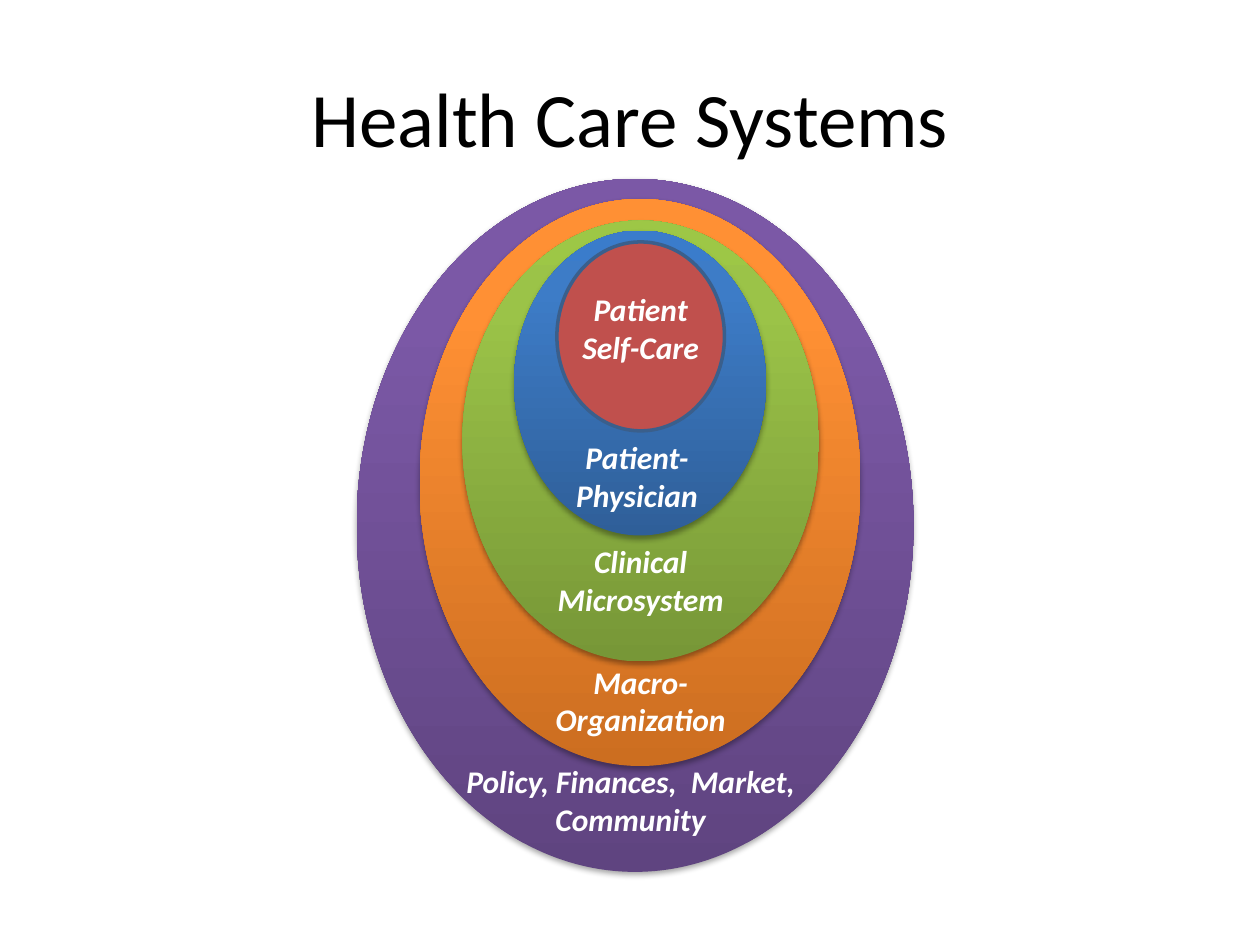
from copy import deepcopy
from dataclasses import dataclass

from lxml import etree
from pptx import Presentation
from pptx.dml.color import RGBColor
from pptx.enum.shapes import MSO_SHAPE
from pptx.enum.text import MSO_ANCHOR, MSO_AUTO_SIZE, PP_ALIGN
from pptx.oxml import parse_xml
from pptx.oxml.ns import nsdecls, qn
from pptx.util import Inches, Pt

OVAL = MSO_SHAPE.OVAL
MIDDLE, TOP = MSO_ANCHOR.MIDDLE, MSO_ANCHOR.TOP
GROW, FIXED = MSO_AUTO_SIZE.SHAPE_TO_FIT_TEXT, MSO_AUTO_SIZE.NONE
CENTER = PP_ALIGN.CENTER


@dataclass(frozen=True)
class Theme:
    font: str = "Calibri"
    title_size: int = 44
    label_size: int = 18
    title_color: str = "000000"
    label_color: str = "FFFFFF"
    policy: tuple = ("5F4480", "7B58A6", "7C57A8")
    macro: tuple = ("CC6E20", "FF9034", "FF9136")
    clinical: tuple = ("779737", "9BC348", "9DC746")
    physician: tuple = ("2F5F99", "3D7CC7", "3A7CCB")
    stops: tuple = (0, 0.8, 1)
    patient: str = "C0504D"
    patient_line: str = "3A5F8C"
    line_width: int = 2
    shadow_color: str = "000000"
    shadow_blur: float = 3.1
    shadow_distance: float = 1.8


THEME = Theme()
TITLE_FORMAT = {"name": THEME.font, "size": Pt(THEME.title_size)}
LABEL_FORMAT = {"name": THEME.font, "size": Pt(THEME.label_size), "bold": True, "italic": True}

TITLE_BOX = (0.5, 0.3, 9, 1.25)
SYSTEMS_BOX = (2.83, 1.42, 4.42, 5.5)

RINGS = [
    ((0, 0, 4.42, 5.5), THEME.policy),
    ((0.5, 0.16, 3.5, 4.5), THEME.macro),
    ((0.84, 0.33, 2.83, 3.5), THEME.clinical),
    ((1.25, 0.41, 2, 2.42), THEME.physician),
]
CORE = (1.59, 0.5, 1.33, 1.5)
LABELS = [
    ((1.42, 2.01, 1.61, 0.71), "Patient-Physician"),
    ((1.42, 2.83, 1.67, 0.71), "Clinical Microsystem"),
    ((1.42, 3.79, 1.67, 0.71), "Macro- Organization"),
    ((0.59, 4.58, 3.17, 0.71), "Policy, Finances,  Market, Community"),
    ((1.59, 0.83, 1.33, 0.71), "Patient Self-Care"),
]


def color(value):
    return RGBColor.from_string(value)


def within(box, part):
    left, top = box[:2]
    return left + part[0], top + part[1], part[2], part[3]


def add_text(slide, box, wording, formats, text_color, anchor, auto_size):
    frame = slide.shapes.add_textbox(*map(Inches, box)).text_frame
    for name, value in {"word_wrap": True, "vertical_anchor": anchor, "auto_size": auto_size}.items():
        setattr(frame, name, value)
    paragraph = frame.paragraphs[0]
    paragraph.alignment = CENTER
    run = paragraph.add_run()
    run.text = wording
    for name, value in formats.items():
        setattr(run.font, name, value)
    run.font.color.rgb = color(text_color)


def add_oval(slide, box):
    oval = slide.shapes.add_shape(OVAL, *map(Inches, box))
    oval.shadow.inherit = False
    return oval


def shade(ring, colors):
    ring.fill.gradient()
    ring.fill.gradient_angle = 90
    stop_list = ring._element.spPr.find(".//" + qn("a:gsLst"))
    stop_list.append(deepcopy(stop_list[-1]))
    for stop, position, value in zip(ring.fill.gradient_stops, THEME.stops, colors):
        stop.position = position
        stop.color.rgb = color(value)


def cast_shadow(ring):
    effects = ring._element.spPr.find(qn("a:effectLst"))
    shadow = parse_xml(
        f'<a:outerShdw {nsdecls("a")} blurRad="{Pt(THEME.shadow_blur)}" '
        f'dist="{Pt(THEME.shadow_distance)}" dir="5400000" rotWithShape="0"/>'
    )
    tint = etree.SubElement(shadow, qn("a:srgbClr"), val=THEME.shadow_color)
    etree.SubElement(tint, qn("a:alpha"), val="35000")
    effects.append(shadow)


def add_title(slide, box):
    add_text(slide, box, "Health Care Systems", TITLE_FORMAT, THEME.title_color, MIDDLE, FIXED)


def add_systems(slide, box):
    for part, colors in RINGS:
        ring = add_oval(slide, within(box, part))
        shade(ring, colors)
        ring.line.fill.background()
        cast_shadow(ring)
    core = add_oval(slide, within(box, CORE))
    core.fill.solid()
    core.fill.fore_color.rgb = color(THEME.patient)
    core.line.color.rgb = color(THEME.patient_line)
    core.line.width = Pt(THEME.line_width)
    for part, wording in LABELS:
        add_text(slide, within(box, part), wording, LABEL_FORMAT, THEME.label_color, TOP, GROW)


def main():
    deck = Presentation()
    deck.slide_width, deck.slide_height = Inches(10), Inches(7.5)
    slide = deck.slides.add_slide(deck.slide_layouts[6])
    add_title(slide, TITLE_BOX)
    add_systems(slide, SYSTEMS_BOX)
    deck.save("out.pptx")


if __name__ == "__main__":
    main()
